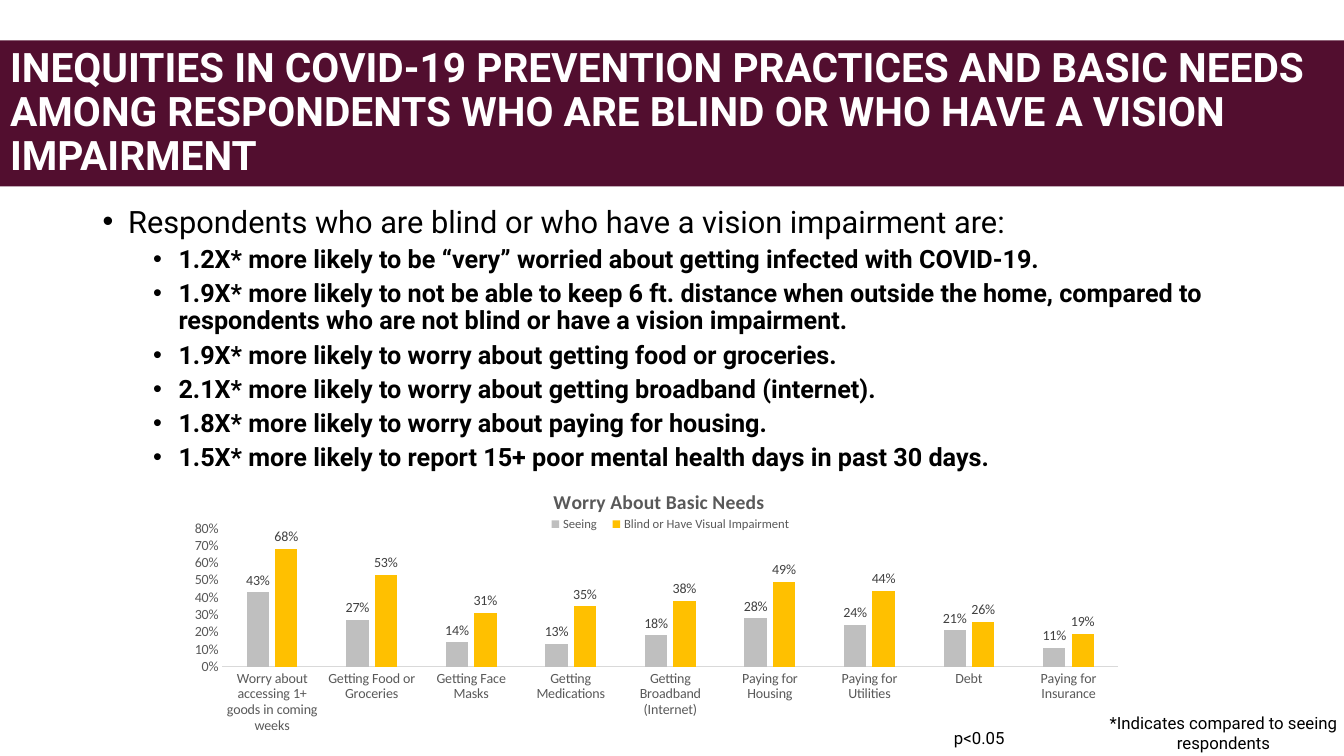
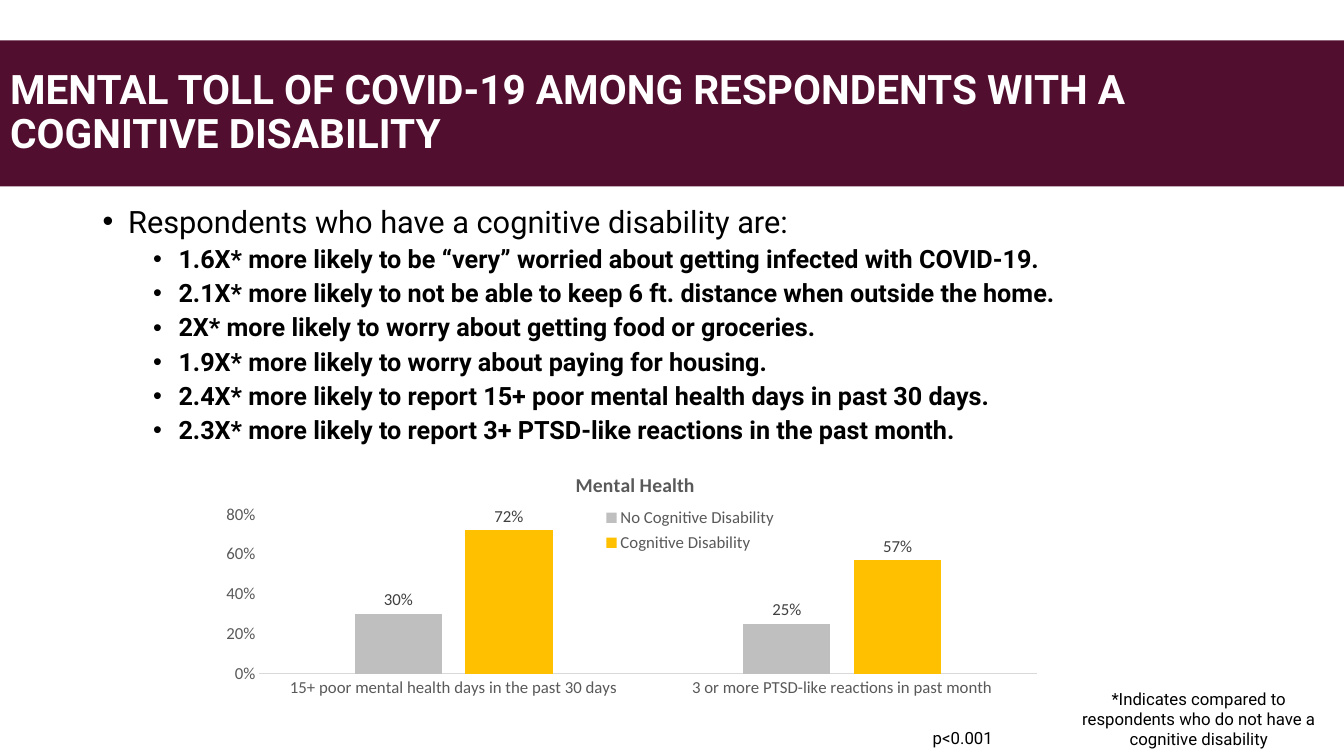
from dataclasses import dataclass

from lxml.etree import SubElement
from pptx import Presentation
from pptx.chart.data import CategoryChartData
from pptx.dml.color import RGBColor
from pptx.enum.chart import XL_CHART_TYPE as ChartType
from pptx.enum.chart import XL_LABEL_POSITION as LabelPosition
from pptx.enum.chart import XL_LEGEND_POSITION as LegendPosition
from pptx.enum.chart import XL_TICK_MARK as TickMark
from pptx.enum.text import MSO_ANCHOR as Anchor
from pptx.enum.text import MSO_AUTO_SIZE as AutoSize
from pptx.enum.text import PP_ALIGN as Align
from pptx.oxml import parse_xml
from pptx.oxml.ns import nsdecls, qn
from pptx.util import Cm, Pt


@dataclass(frozen=True)
class Theme:
    text_font: str = "Roboto"
    chart_font: str = "Calibri"
    band: str = "520E2F"
    white: str = "FFFFFF"
    ink: str = "000000"
    axis_text: str = "595959"
    label_text: str = "404040"
    axis_line: str = "D9D9D9"
    series: tuple = ("BFBFBF", "FFC000")
    title_size: float = 29
    lead_size: float = 22
    bullet_size: float = 18
    note_size: float = 12
    chart_title_size: float = 14


def place(element, index, **fractions):
    for old in element.findall(qn("c:layout")):
        element.remove(old)
    layout = parse_xml(f"<c:layout {nsdecls('c')}><c:manualLayout/></c:layout>")
    manual = layout[0]
    if element.tag == qn("c:plotArea"):
        SubElement(manual, qn("c:layoutTarget"), val="inner")
    for axis in ("x", "y"):
        SubElement(manual, qn(f"c:{axis}Mode"), val="edge")
    for name, value in fractions.items():
        SubElement(manual, qn(f"c:{name}"), val=str(value))
    element.insert(index, layout)


class SurveyDeck:
    def __init__(self, theme):
        self.theme = theme
        self.deck = Presentation()
        self.deck.slide_width = Cm(33.87)
        self.deck.slide_height = Cm(19.05)
        self.page = None

    def style(self, font, size, color, name, bold=False):
        font.size = Pt(size)
        font.color.rgb = RGBColor.from_string(color)
        font.name = name
        font.bold = bold

    def add_page(self, title):
        theme = self.theme
        self.page = self.deck.slides.add_slide(self.deck.slide_layouts[5])
        band = self.page.shapes.title
        band.left, band.top = Cm(0), Cm(1.02)
        band.width, band.height = self.deck.slide_width, Cm(3.68)
        band.fill.solid()
        band.fill.fore_color.rgb = RGBColor.from_string(theme.band)
        frame = band.text_frame
        frame.text = title
        frame.auto_size = AutoSize.NONE
        frame.vertical_anchor = Anchor.MIDDLE
        para = frame.paragraphs[0]
        para.alignment = Align.LEFT
        para.line_spacing = 0.9
        self.style(para.runs[0].font, theme.title_size, theme.white, theme.text_font, True)

    def add_bullets(self, lead, points):
        theme = self.theme
        box = self.page.shapes.add_textbox(Cm(2.34), Cm(5.08), Cm(29.21), Cm(6.6))
        frame = box.text_frame
        frame.word_wrap = True
        frame.text = "\n".join([lead, *points])
        for number, para in enumerate(frame.paragraphs):
            is_point = number > 0
            para.level = int(is_point)
            para.line_spacing = 0.9
            para.space_before = Pt(5 if is_point else 10)
            properties = para._p.get_or_add_pPr()
            properties.set("marL", str(Cm(1.91 if is_point else 0.64)))
            properties.set("indent", str(-Cm(0.64)))
            SubElement(properties, qn("a:buFont"), typeface="Arial")
            SubElement(properties, qn("a:buChar"), char="•")
            size = theme.bullet_size if is_point else theme.lead_size
            self.style(para.runs[0].font, size, theme.ink, theme.text_font, is_point)

    def add_note(self, text, left, top, width, height):
        box = self.page.shapes.add_textbox(Cm(left), Cm(top), Cm(width), Cm(height))
        frame = box.text_frame
        frame.word_wrap = True
        frame.margin_left = frame.margin_right = Cm(0)
        frame.margin_top = frame.margin_bottom = Cm(0.33)
        frame.text = text
        para = frame.paragraphs[0]
        para.alignment = Align.CENTER
        self.style(para.runs[0].font, self.theme.note_size, self.theme.ink, self.theme.text_font)

    def add_columns(self, title, categories, series, bounds, step, size, legend_size,
                    title_at, legend_at, plot_at):
        theme = self.theme
        data = CategoryChartData(number_format="0%")
        data.categories = categories
        for name, values in series.items():
            data.add_series(name, values)
        chart = self.page.shapes.add_chart(
            ChartType.COLUMN_CLUSTERED, *map(Cm, bounds), data).chart
        self.style(chart.font, size, theme.axis_text, theme.chart_font)

        chart.has_title = True
        heading = chart.chart_title.text_frame
        heading.text = title
        self.style(heading.paragraphs[0].runs[0].font, theme.chart_title_size,
                   theme.axis_text, theme.chart_font, True)
        place(chart.chart_title._element, 1, **title_at)

        chart.has_legend = True
        chart.legend.position = LegendPosition.BOTTOM
        chart.legend.include_in_layout = False
        self.style(chart.legend.font, legend_size, theme.axis_text, theme.chart_font)
        place(chart.legend._element, 1, **legend_at)
        place(chart._chartSpace.chart.plotArea, 0, **plot_at)

        for axis in (chart.category_axis, chart.value_axis):
            axis.major_tick_mark = axis.minor_tick_mark = TickMark.NONE
            axis.has_major_gridlines = False
            self.style(axis.tick_labels.font, size, theme.axis_text, theme.chart_font)
        line = chart.category_axis.format.line
        line.color.rgb = RGBColor.from_string(theme.axis_line)
        line.width = Pt(0.75)
        scale = chart.value_axis
        scale.format.line.fill.background()
        scale.minimum_scale, scale.maximum_scale, scale.major_unit = 0, 0.8, step
        scale.tick_labels.number_format = "0%"
        scale.tick_labels.number_format_is_linked = False

        plot = chart.plots[0]
        plot.gap_width, plot.overlap = 219, -27
        plot.vary_by_categories = False
        for group, color in zip(plot.series, theme.series):
            group.format.fill.solid()
            group.format.fill.fore_color.rgb = RGBColor.from_string(color)
            labels = group.data_labels
            labels.show_value = True
            labels.position = LabelPosition.OUTSIDE_END
            labels.number_format = "0%"
            labels.number_format_is_linked = False
            self.style(labels.font, size, theme.label_text, theme.chart_font)


def main():
    survey = SurveyDeck(Theme())

    survey.add_page("INEQUITIES IN COVID-19 PREVENTION PRACTICES AND BASIC NEEDS AMONG "
                    "RESPONDENTS WHO ARE BLIND OR WHO HAVE A VISION IMPAIRMENT")
    survey.add_bullets("Respondents who are blind or who have a vision impairment are:", [
        "1.2X* more likely to be “very” worried about getting infected with COVID-19.",
        "1.9X* more likely to not be able to keep 6 ft. distance when outside the home, "
        "compared to respondents who are not blind or have a vision impairment.",
        "1.9X* more likely to worry about getting food or groceries.",
        "2.1X* more likely to worry about getting broadband (internet).",
        "1.8X* more likely to worry about paying for housing.",
        "1.5X* more likely to report 15+ poor mental health days in past 30 days.",
    ])
    survey.add_note("*Indicates compared to seeing respondents", 27.81, 17.63, 6.05, 1.42)
    survey.add_note("p<0.05", 23.6, 18.08, 2.16, 0.97)
    survey.add_columns(
        "Worry About Basic Needs",
        ["Worry about accessing 1+ goods in coming weeks", "Getting Food or Groceries",
         "Getting Face Masks", "Getting Medications", "Getting Broadband (Internet)",
         "Paying for Housing", "Paying for Utilities", "Debt", "Paying for Insurance"],
        {"Seeing": (0.43, 0.27, 0.14, 0.13, 0.18, 0.28, 0.24, 0.21, 0.11),
         "Blind or Have Visual Impairment":
             (0.68, 0.53, 0.31, 0.35, 0.38, 0.49, 0.44, 0.26, 0.19)},
        bounds=(4.39, 11.79, 24.28, 7.26), step=0.1, size=10, legend_size=9,
        title_at=dict(x=0.39, y=0.06),
        legend_at=dict(x=0.38, y=0.16, w=0.27, h=0.07),
        plot_at=dict(x=0.05, y=0.21, w=0.93, h=0.48))

    survey.add_page("MENTAL TOLL OF COVID-19 AMONG RESPONDENTS WITH A COGNITIVE DISABILITY")
    survey.add_bullets("Respondents who have a cognitive disability are:", [
        "1.6X* more likely to be “very” worried about getting infected with COVID-19.",
        "2.1X* more likely to not be able to keep 6 ft. distance when outside the home.",
        "2X* more likely to worry about getting food or groceries.",
        "1.9X* more likely to worry about paying for housing.",
        "2.4X* more likely to report 15+ poor mental health days in past 30 days.",
        "2.3X* more likely to report 3+ PTSD-like reactions in the past month.",
    ])
    survey.add_note("*Indicates compared to respondents who do not have a cognitive disability",
                    26.87, 17.02, 6.68, 2.03)
    survey.add_note("p<0.001", 22.78, 18.08, 2.97, 0.97)
    survey.add_columns(
        "Mental Health",
        ["15+ poor mental health days in the past 30 days",
         "3 or more PTSD-like reactions in past month"],
        {"No Cognitive Disability": (0.3, 0.25), "Cognitive Disability": (0.72, 0.57)},
        bounds=(5.26, 11.35, 21.29, 7.32), step=0.2, size=12, legend_size=12,
        title_at=dict(x=0.43, y=0.06),
        legend_at=dict(x=0.46, y=0.18, w=0.22, h=0.19),
        plot_at=dict(x=0.06, y=0.22, w=0.92, h=0.55))

    survey.deck.save("out.pptx")


if __name__ == "__main__":
    main()
